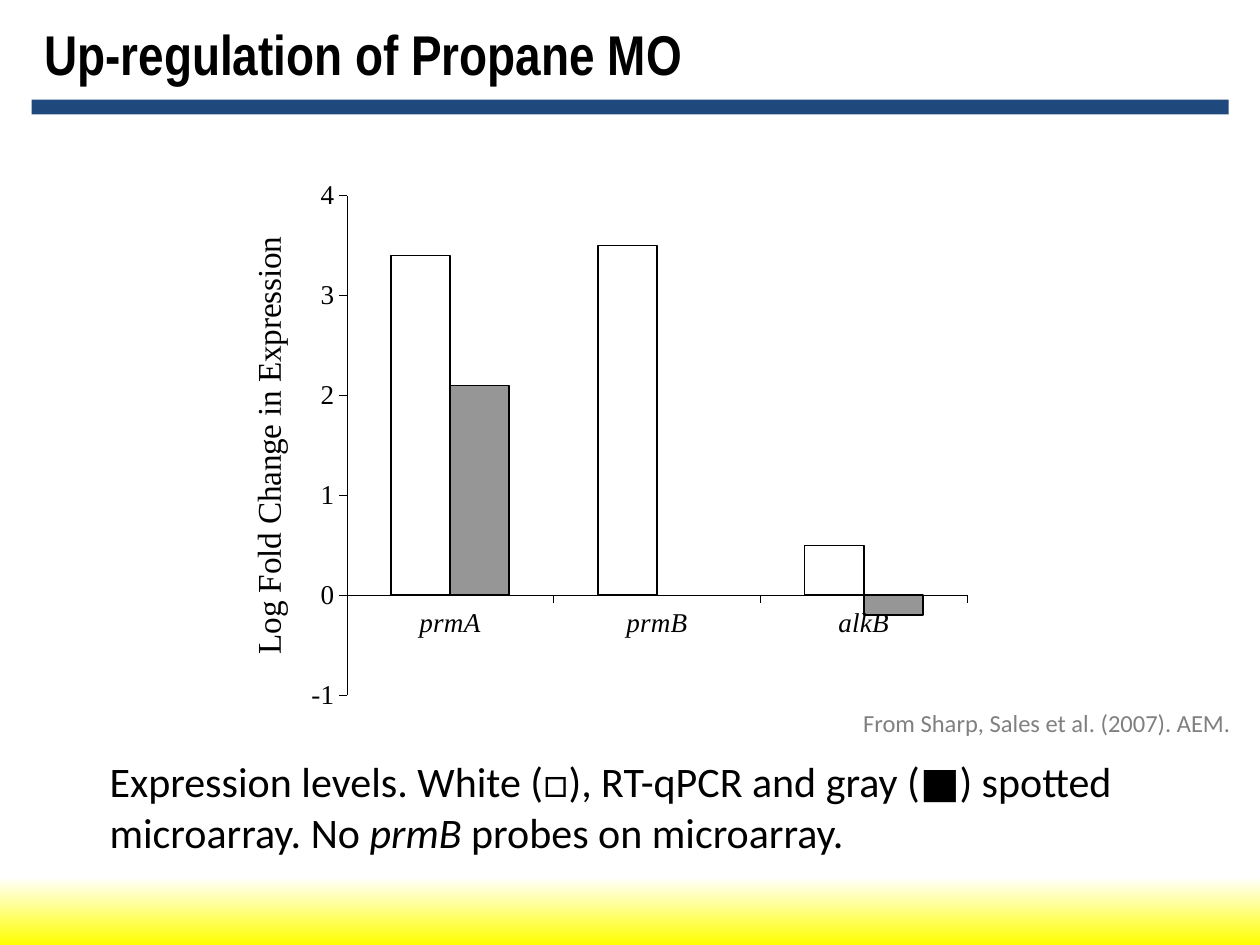
import pptx
import pptx.chart.data
import pptx.dml.color
import pptx.enum.chart
import pptx.enum.shapes
import pptx.enum.text
import pptx.oxml
import pptx.oxml.ns
import pptx.util
from dataclasses import dataclass
from lxml import etree

Cm, Pt = pptx.util.Cm, pptx.util.Pt
RGBColor = pptx.dml.color.RGBColor
MSO_ANCHOR = pptx.enum.text.MSO_ANCHOR
qn = pptx.oxml.ns.qn


@dataclass
class Theme:
    black: RGBColor = RGBColor(0, 0, 0)
    white: RGBColor = RGBColor(255, 255, 255)
    yellow: RGBColor = RGBColor(255, 255, 0)
    navy: RGBColor = RGBColor(0x1F, 0x49, 0x7D)
    bar_gray: RGBColor = RGBColor(0x96, 0x96, 0x96)
    credit_gray: RGBColor = RGBColor(0x80, 0x80, 0x80)
    title_size: float = 32
    caption_size: float = 24
    axis_title_size: float = 19
    tick_size: float = 15.5
    credit_size: float = 14


theme = Theme()


def write_text(frame, *runs, font="Calibri", size=theme.caption_size, color=theme.black,
               bold=False, anchor=MSO_ANCHOR.TOP, wrap=True):
    """Fill the frame's first paragraph with (text, italic) runs."""
    frame.word_wrap = wrap
    frame.auto_size = pptx.enum.text.MSO_AUTO_SIZE.NONE
    frame.vertical_anchor = anchor
    paragraph = frame.paragraphs[0]
    paragraph.alignment = pptx.enum.text.PP_ALIGN.LEFT
    for text, italic in runs:
        run = paragraph.add_run()
        run.text = text
        run.font.name, run.font.size = font, Pt(size)
        run.font.bold, run.font.italic = bold, italic
        run.font.color.rgb = color


def add_rectangle(left, top, width, height):
    """Add a rectangle without line or shadow, placed in centimetres."""
    shape = slide.shapes.add_shape(pptx.enum.shapes.MSO_SHAPE.RECTANGLE,
                                   Cm(left), Cm(top), Cm(width), Cm(height))
    shape.shadow.inherit = False
    shape.line.fill.background()
    return shape


presentation = pptx.Presentation()
presentation.slide_width, presentation.slide_height = Cm(25.4), Cm(19.05)
slide = presentation.slides.add_slide(presentation.slide_layouts[5])

# Bands
footer = add_rectangle(0, 17.68, 25.4, 1.37)
footer.fill.gradient()
footer.fill.gradient_angle = 270
for stop, position, color in zip(footer.fill.gradient_stops, (0, 1), (theme.white, theme.yellow)):
    stop.position = position
    stop.color.rgb = color

title_rule = add_rectangle(0.64, 2.01, 24.13, 0.3)
title_rule.fill.solid()
title_rule.fill.fore_color.rgb = theme.navy

# Title
title = slide.shapes.title
title.left, title.top, title.width, title.height = Cm(0.64), Cm(0.43), Cm(24.13), Cm(1.27)
write_text(title.text_frame, ("Up-regulation of Propane MO", False), font="Arial Narrow",
           size=theme.title_size, bold=True, anchor=MSO_ANCHOR.MIDDLE)

# Expression chart, tall enough for its axis title to stay on one line
chart_data = pptx.chart.data.CategoryChartData(number_format="0.0")
chart_data.categories = ["prmA", "prmB", "alkB"]
chart_data.add_series("Series 1", (3.4, 3.5, 0.5))
chart_data.add_series("Series 2", (2.1, None, -0.2))
chart = slide.shapes.add_chart(pptx.enum.chart.XL_CHART_TYPE.COLUMN_CLUSTERED,
                               Cm(4.88), Cm(2.4), Cm(15.29), Cm(12.36), chart_data).chart
chart.has_title = chart.has_legend = False
chart.font.name, chart.font.size = "Arial", Pt(12)
chart.font.color.rgb = theme.black

plot = chart.plots[0]
plot.gap_width, plot.overlap, plot.vary_by_categories = 150, 0, False
for series, color in zip(plot.series, (theme.white, theme.bar_gray)):
    series.invert_if_negative = False
    series.format.fill.solid()
    series.format.fill.fore_color.rgb = color
    series.format.line.color.rgb = theme.black
    series.format.line.width = Pt(1)

for axis in (chart.category_axis, chart.value_axis):
    axis.has_major_gridlines = False
    axis.major_tick_mark = pptx.enum.chart.XL_TICK_MARK.OUTSIDE
    axis.minor_tick_mark = pptx.enum.chart.XL_TICK_MARK.NONE
    axis.format.line.color.rgb = theme.black
    axis.format.line.width = Pt(0.25)
    font = axis.tick_labels.font
    font.name, font.size = "Times New Roman", Pt(theme.tick_size)
    font.color.rgb = theme.black
chart.category_axis.tick_labels.font.italic = True

value_axis = chart.value_axis
value_axis.minimum_scale, value_axis.maximum_scale, value_axis.major_unit = -1, 4, 1
value_axis.tick_labels.number_format = "0"
value_axis.tick_labels.number_format_is_linked = False
axis_title = value_axis.axis_title.text_frame
write_text(axis_title, ("Log Fold Change in Expression", False),
           font="Times New Roman", size=theme.axis_title_size, wrap=False)
axis_title.paragraphs[0].alignment = None
body = axis_title._txBody.find(qn("a:bodyPr"))
body.set("rot", "-5400000")
body.set("vert", "horz")

# Fixed inner plot area
plot_area = chart._chartSpace.find(".//" + qn("c:plotArea"))
for old_layout in plot_area.findall(qn("c:layout")):
    plot_area.remove(old_layout)
layout = etree.Element(qn("c:layout"))
plot_area.insert(0, layout)
manual = etree.SubElement(layout, qn("c:manualLayout"))
for name, value in (("layoutTarget", "inner"), ("xMode", "edge"), ("yMode", "edge"),
                    ("x", 0.138), ("y", 0.125), ("w", 0.818), ("h", 0.815)):
    etree.SubElement(manual, qn("c:" + name)).set("val", str(value))

# Caption and credit
caption = add_rectangle(1.96, 15.11, 22.02, 2.31)
caption.fill.solid()
caption.fill.fore_color.rgb = theme.white
white_fill = caption._element.spPr.find(".//" + qn("a:srgbClr"))
etree.SubElement(white_fill, qn("a:alpha")).set("val", "20000")
write_text(caption.text_frame,
           ("Expression levels. White (□), RT-qPCR and gray (■) spotted microarray. No ", False),
           ("prmB", True), (" probes on microarray.", False))

credit = slide.shapes.add_textbox(Cm(17.15), Cm(14.15), Cm(8.08), Cm(0.86))
write_text(credit.text_frame, ("From Sharp, Sales et al. (2007). AEM.", False),
           size=theme.credit_size, color=theme.credit_gray, wrap=False)

presentation.save("out.pptx")
